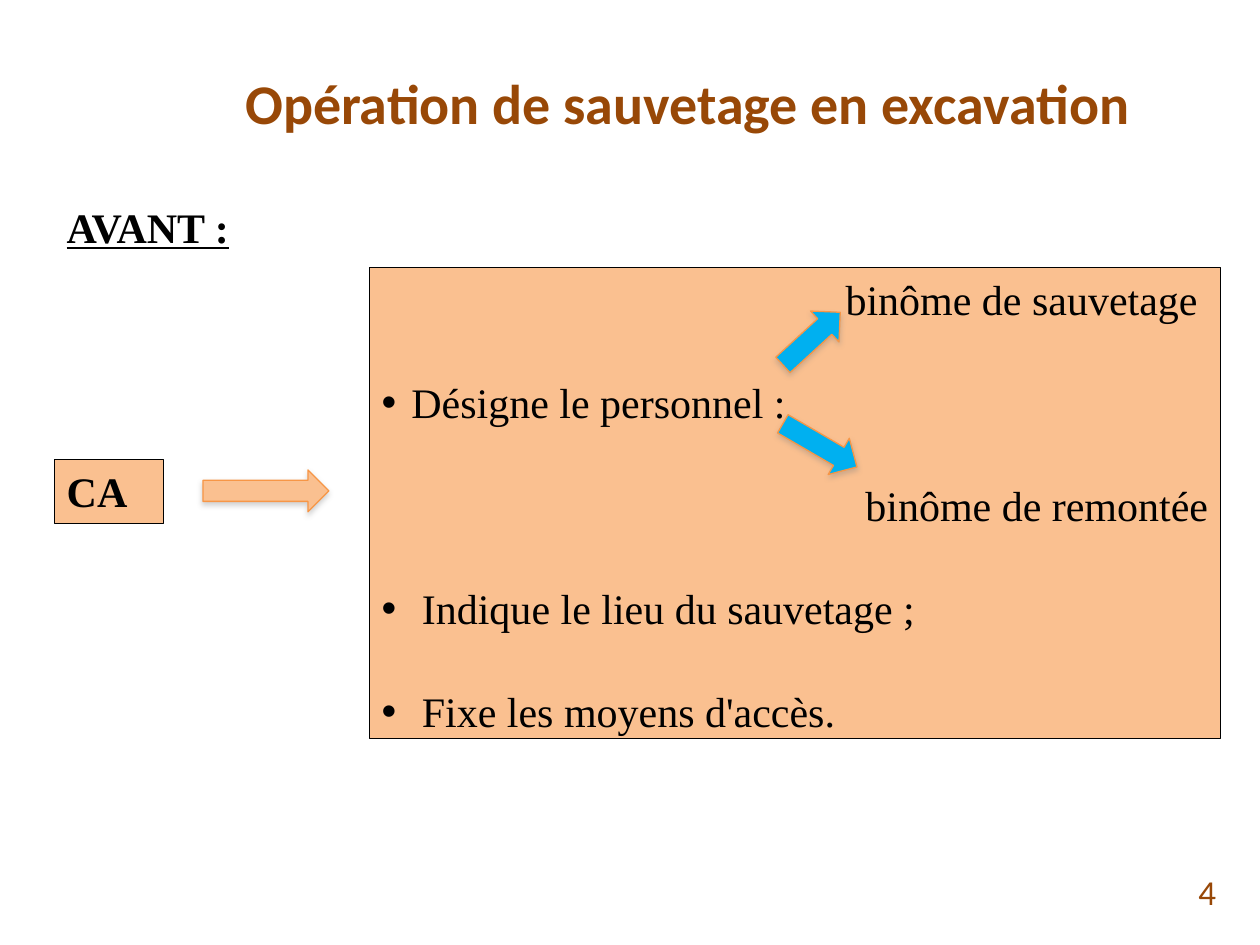
import pptx
import pptx.dml.color
import pptx.enum.shapes
import pptx.enum.text
import pptx.oxml
import pptx.oxml.ns
import pptx.util

Pt = pptx.util.Pt
ALIGN = pptx.enum.text.PP_ALIGN
ANCHOR = pptx.enum.text.MSO_ANCHOR
SHAPE = pptx.enum.shapes.MSO_SHAPE

BROWN = pptx.dml.color.RGBColor(0x98, 0x48, 0x07)
BLACK = pptx.dml.color.RGBColor(0x00, 0x00, 0x00)
PEACH = pptx.dml.color.RGBColor(0xFA, 0xC0, 0x90)
ORANGE = pptx.dml.color.RGBColor(0xF7, 0x96, 0x46)
BLUE = pptx.dml.color.RGBColor(0x00, 0xB0, 0xF0)

SERIF = "Times New Roman"
SANS = "Calibri"
BULLET_INDENT = Pt(17)
DUTY_GAP = Pt(30)

DUTIES = [
    ("binôme de sauvetage ", False),
    ("Désigne le personnel :", True),
    ("binôme de remontée", False),
    (" Indique le lieu du sauvetage ;", True),
    (" Fixe les moyens d'accès.", True),
]


def points(*lengths):
    return [Pt(length) for length in lengths]


def style(paragraph, size, font=SERIF, color=BLACK, bold=False, underline=False):
    for run in paragraph.runs:
        run.font.size = Pt(size)
        run.font.name = font
        run.font.color.rgb = color
        run.font.bold = bold
        run.font.underline = underline


def add_label(slide, box, text, align, size, anchor=ANCHOR.TOP, wrap=True, **look):
    frame = slide.shapes.add_textbox(*points(*box)).text_frame
    frame.word_wrap = wrap
    frame.vertical_anchor = anchor
    frame.text = text
    frame.paragraphs[0].alignment = align
    style(frame.paragraphs[0], size, **look)


def add_filled(slide, kind, box, fill, line):
    shape = slide.shapes.add_shape(kind, *points(*box))
    shape.shadow.inherit = False
    shape.fill.solid()
    shape.fill.fore_color.rgb = fill
    shape.line.color.rgb = line
    shape.line.width = Pt(0.75)
    return shape


def add_panel(slide, box):
    """Add a bordered rectangle and return its text frame."""
    panel = add_filled(slide, SHAPE.RECTANGLE, box, PEACH, BLACK)
    panel.text_frame.word_wrap = True
    panel.text_frame.vertical_anchor = ANCHOR.TOP
    return panel.text_frame


def add_arrow(slide, box, fill, rotation=0):
    arrow = add_filled(slide, SHAPE.RIGHT_ARROW, box, fill, ORANGE)
    arrow.rotation = rotation
    effects = arrow.element.spPr.find(pptx.oxml.ns.qn("a:effectLst"))
    effects.append(pptx.oxml.parse_xml(
        f'<a:outerShdw {pptx.oxml.ns.nsdecls("a")} blurRad="{Pt(3.1)}" '
        f'dist="{Pt(1.8)}" dir="5400000" rotWithShape="0">'
        '<a:srgbClr val="808080"><a:alpha val="35000"/></a:srgbClr>'
        '</a:outerShdw>'))


def add_bullet(paragraph):
    properties = paragraph._p.get_or_add_pPr()
    properties.set("marL", str(BULLET_INDENT))
    properties.set("indent", str(-BULLET_INDENT))
    for tag in ('buFont {} typeface="Arial"', 'buChar {} char="•"'):
        properties.append(pptx.oxml.parse_xml(
            "<a:" + tag.format(pptx.oxml.ns.nsdecls("a")) + "/>"))


def fill_duties(frame):
    frame.text = "\n".join(text for text, _ in DUTIES)
    for index, (paragraph, (_, bulleted)) in enumerate(zip(frame.paragraphs, DUTIES)):
        paragraph.alignment = ALIGN.LEFT if bulleted else ALIGN.RIGHT
        if index:
            paragraph.space_before = DUTY_GAP
        if bulleted:
            add_bullet(paragraph)
        style(paragraph, 24)


def main():
    deck = pptx.Presentation()
    deck.slide_width, deck.slide_height = points(720, 540)
    slide = deck.slides.add_slide(deck.slide_layouts[6])

    add_label(slide, (88, 21.5, 610, 74), "Opération de sauvetage en excavation",
              ALIGN.CENTER, 32, ANCHOR.MIDDLE, font=SANS, color=BROWN, bold=True)
    add_label(slide, (534, 495, 168, 29), "4", ALIGN.RIGHT, 20, ANCHOR.MIDDLE,
              font=SANS, color=BROWN)
    add_label(slide, (31, 111.5, 109, 36.5), "AVANT :", ALIGN.LEFT, 24,
              wrap=False, bold=True, underline=True)

    leader = add_panel(slide, (31, 262.5, 62.5, 36.5))
    leader.text = "CA"
    leader.paragraphs[0].alignment = ALIGN.LEFT
    style(leader.paragraphs[0], 24, bold=True)

    fill_duties(add_panel(slide, (211, 153, 486.5, 269)))

    add_arrow(slide, (116, 268.5, 72, 24), PEACH)
    add_arrow(slide, (444, 242.5, 49, 24), BLUE, 30.2)
    add_arrow(slide, (441.5, 181.5, 44.5, 24), BLUE, 317.4)

    deck.save("out.pptx")


if __name__ == "__main__":
    main()
